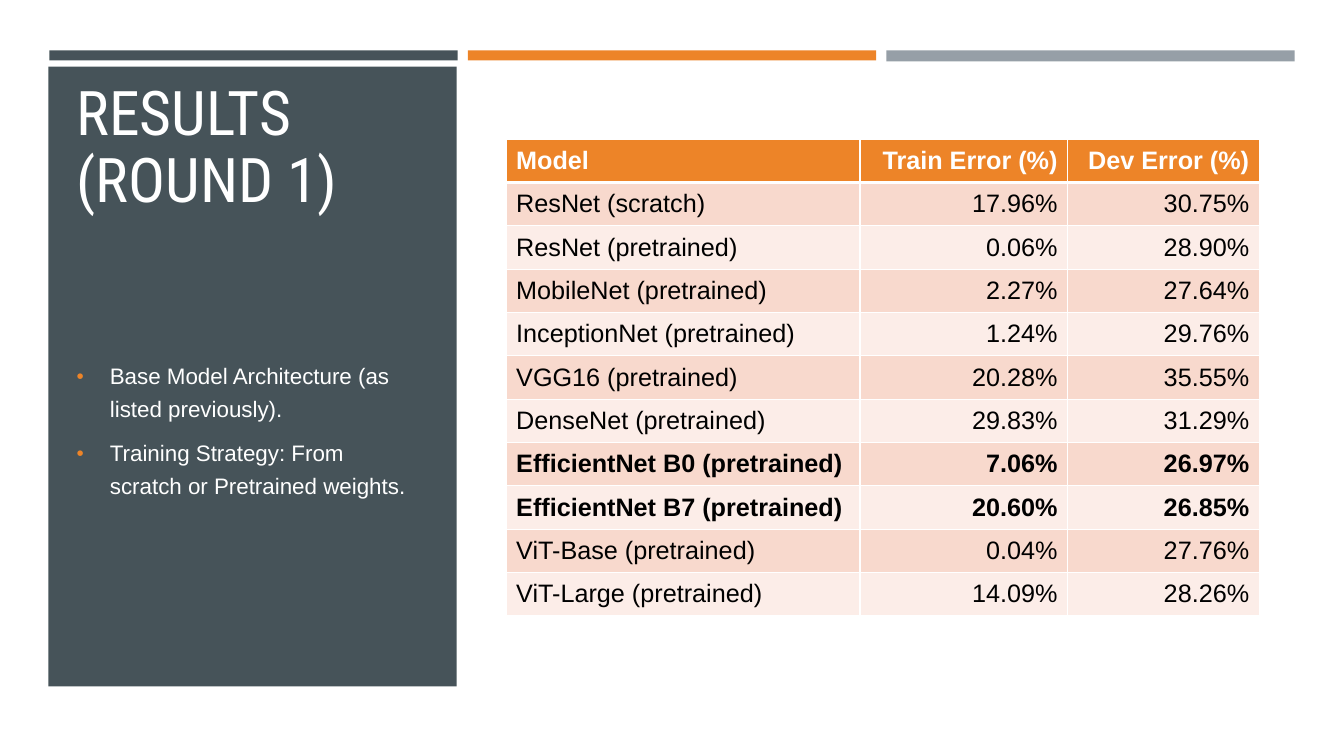
from dataclasses import dataclass

from lxml import etree
from pptx import Presentation
from pptx.dml.color import RGBColor
from pptx.enum.shapes import MSO_SHAPE
from pptx.enum.text import MSO_ANCHOR, MSO_AUTO_SIZE, PP_ALIGN
from pptx.oxml.ns import qn
from pptx.util import Pt

RECTANGLE = MSO_SHAPE.RECTANGLE
LEFT, RIGHT = PP_ALIGN.LEFT, PP_ALIGN.RIGHT
MIDDLE, BOTTOM = MSO_ANCHOR.MIDDLE, MSO_ANCHOR.BOTTOM
NO_AUTOFIT = MSO_AUTO_SIZE.NONE

WHITE = RGBColor(0xFF, 0xFF, 0xFF)
BLACK = RGBColor(0x00, 0x00, 0x00)
SLATE = RGBColor(0x46, 0x53, 0x59)
ORANGE = RGBColor(0xED, 0x84, 0x28)
GRAY = RGBColor(0x96, 0x9F, 0xA7)
ROW_TINTS = (RGBColor(0xF8, 0xD9, 0xCD), RGBColor(0xFC, 0xED, 0xE8))

EMU_PER_PX = 9144  # 100 px to the inch
TITLE_FONT, TEXT_FONT = "Roboto Condensed", "Arial"


@dataclass(frozen=True)
class Box:
    left: int
    top: int
    width: int
    height: int


@dataclass(frozen=True)
class Panel:
    box: Box
    color: RGBColor


@dataclass(frozen=True)
class Result:
    model: str
    train_error: str
    dev_error: str
    best: bool = False


PANELS = (
    Panel(Box(49, 50, 405, 10), SLATE),
    Panel(Box(464, 50, 405, 10), ORANGE),
    Panel(Box(879, 50, 405, 11), GRAY),
    Panel(Box(48, 66, 405, 615), SLATE),
)
TITLE_BOX = Box(66, 77, 373, 142)
LIST_BOX = Box(66, 238, 373, 418)
TABLE_BOX = Box(502, 138, 747, 473)
COLUMN_WIDTHS = (351, 206, 190)

POINTS = (
    "Base Model Architecture (as listed previously).",
    "Training Strategy: From scratch\u00a0or Pretrained weights.",
)
HEADER = Result("Model", "Train Error (%)", "Dev Error (%)", best=True)
RESULTS = (
    Result("ResNet (scratch)", "17.96%", "30.75%"),
    Result("ResNet (pretrained)", "0.06%", "28.90%"),
    Result("MobileNet (pretrained)", "2.27%", "27.64%"),
    Result("InceptionNet (pretrained)", "1.24%", "29.76%"),
    Result("VGG16 (pretrained)", "20.28%", "35.55%"),
    Result("DenseNet (pretrained)", "29.83%", "31.29%"),
    Result("EfficientNet B0 (pretrained)", "7.06%", "26.97%", best=True),
    Result("EfficientNet B7 (pretrained)", "20.60%", "26.85%", best=True),
    Result("ViT-Base (pretrained)", "0.04%", "27.76%"),
    Result("ViT-Large (pretrained)", "14.09%", "28.26%"),
)


def px(length: int) -> int:
    return length * EMU_PER_PX


def place(shape, box: Box) -> None:
    shape.left, shape.top = px(box.left), px(box.top)
    shape.width, shape.height = px(box.width), px(box.height)


def write(paragraph, text: str, *, size: int, color: RGBColor = WHITE,
          font: str = TEXT_FONT, bold: bool = False, align=LEFT,
          line_spacing: float = 1.0) -> None:
    paragraph.alignment = align
    paragraph.line_spacing = line_spacing
    run = paragraph.add_run()
    run.text = text
    run.font.name = font
    run.font.size = Pt(size)
    run.font.bold = bold
    run.font.color.rgb = color


def add_panel(slide, panel: Panel) -> None:
    shape = slide.shapes.add_shape(RECTANGLE, 0, 0, 0, 0)
    place(shape, panel.box)
    shape.shadow.inherit = False
    shape.fill.solid()
    shape.fill.fore_color.rgb = panel.color
    shape.line.fill.background()
    # Send behind the placeholders
    shape.element.getparent().insert(2, shape.element)


def add_bullet(paragraph, color: RGBColor) -> None:
    properties = paragraph._p.get_or_add_pPr()
    properties.set("marL", str(px(33)))
    properties.set("indent", str(-px(33)))
    bullet_color = etree.SubElement(properties, qn("a:buClr"))
    etree.SubElement(bullet_color, qn("a:srgbClr"), val=str(color))
    etree.SubElement(properties, qn("a:buSzPct"), val="92000")
    etree.SubElement(properties, qn("a:buFont"), typeface=TEXT_FONT)
    etree.SubElement(properties, qn("a:buChar"), char="•")


def add_borders(cell, top: int, bottom: int) -> None:
    properties = cell._tc.get_or_add_tcPr()
    for side, width in (("L", 1), ("R", 1), ("T", top), ("B", bottom)):
        line = etree.SubElement(properties, qn(f"a:ln{side}"), w=str(Pt(width)))
        fill = etree.SubElement(line, qn("a:solidFill"))
        etree.SubElement(fill, qn("a:srgbClr"), val=str(WHITE))


def fill_title(slide) -> None:
    title = slide.shapes.title
    place(title, TITLE_BOX)
    frame = title.text_frame
    frame.word_wrap, frame.auto_size = True, NO_AUTOFIT
    frame.vertical_anchor = BOTTOM
    write(frame.paragraphs[0], "RESULTS (ROUND 1)", size=44,
          font=TITLE_FONT, line_spacing=0.9)


def fill_list(slide) -> None:
    body = slide.placeholders[1]
    place(body, LIST_BOX)
    frame = body.text_frame
    frame.word_wrap, frame.auto_size = True, NO_AUTOFIT
    frame.vertical_anchor = MIDDLE
    frame.margin_bottom = px(50)  # lifts the list above the panel's middle
    for index, point in enumerate(POINTS):
        paragraph = frame.add_paragraph() if index else frame.paragraphs[0]
        write(paragraph, point, size=16, line_spacing=1.2)
        paragraph.space_before, paragraph.space_after = Pt(3), Pt(6)
        add_bullet(paragraph, ORANGE)


def add_results_table(slide) -> None:
    rows = (HEADER, *RESULTS)
    frame = slide.shapes.add_table(len(rows), len(COLUMN_WIDTHS), 0, 0, 0, 0)
    place(frame, TABLE_BOX)
    table = frame.table
    for column, width in zip(table.columns, COLUMN_WIDTHS):
        column.width = px(width)
    for index, result in enumerate(rows):
        table.rows[index].height = px(TABLE_BOX.height // len(rows))
        is_header = index == 0
        values = (result.model, result.train_error, result.dev_error)
        for column_index, value in enumerate(values):
            cell = table.cell(index, column_index)
            cell.vertical_anchor = MIDDLE
            add_borders(cell, top=3 if index == 1 else 1,
                        bottom=3 if is_header else 1)
            cell.fill.solid()
            cell.fill.fore_color.rgb = ORANGE if is_header else ROW_TINTS[(index - 1) % 2]
            write(cell.text_frame.paragraphs[0], value, size=18,
                  color=WHITE if is_header else BLACK, bold=result.best,
                  align=RIGHT if column_index else LEFT)


def main() -> None:
    presentation = Presentation()
    presentation.slide_width, presentation.slide_height = px(1333), px(750)
    slide = presentation.slides.add_slide(presentation.slide_layouts[1])
    slide.background.fill.solid()
    slide.background.fill.fore_color.rgb = WHITE

    # Colour bars and side panel
    for panel in PANELS:
        add_panel(slide, panel)

    # Side panel text
    fill_title(slide)
    fill_list(slide)

    # Error rates by model
    add_results_table(slide)
    presentation.save("out.pptx")


if __name__ == "__main__":
    main()
